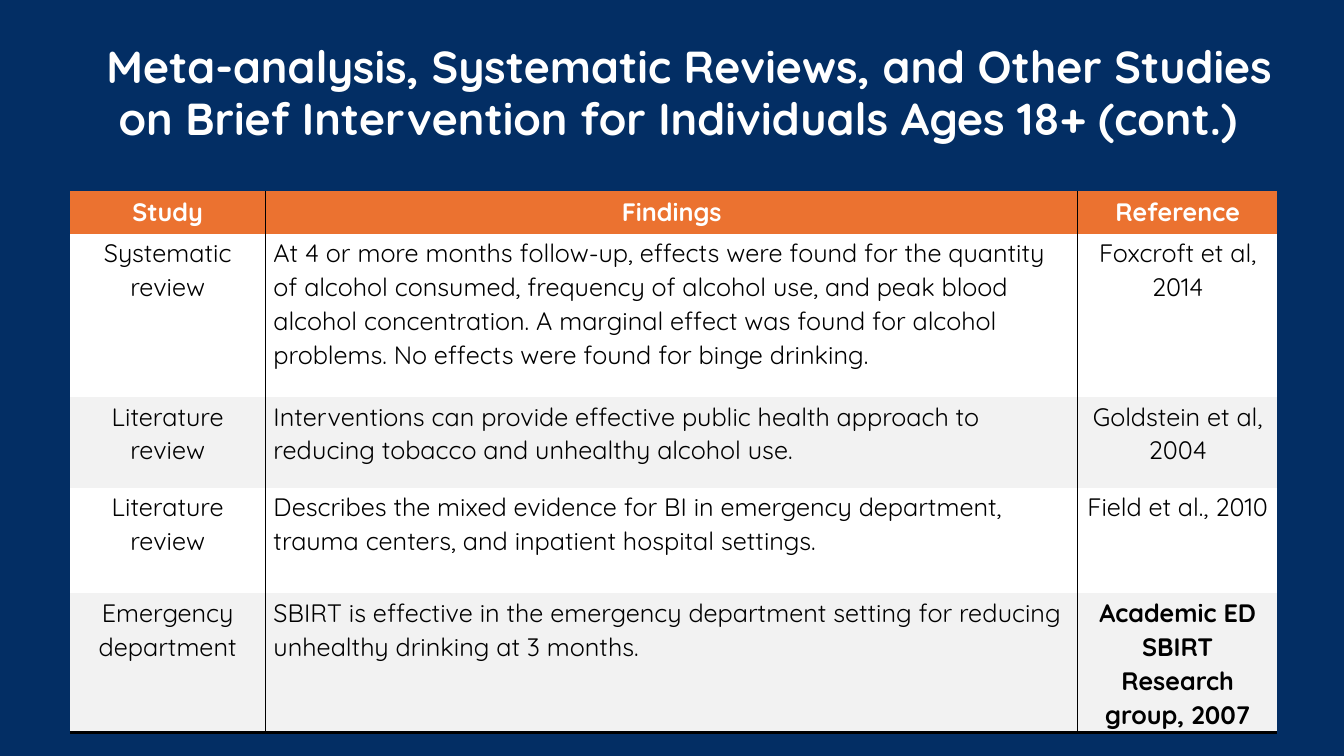
from lxml import etree
from pptx import Presentation, util as u
from pptx.dml.color import RGBColor
from pptx.enum import text
from pptx.oxml.ns import qn

COLORS = {"navy": "032E64", "orange": "EB7230", "white": "FFFFFF",
          "band": "F2F2F2", "black": "000000"}
NO_STYLE = "{2D5ABB26-0587-4C30-8999-92F81FD0307C}"
CENTER, LEFT = text.PP_ALIGN.CENTER, text.PP_ALIGN.LEFT

TITLE = ("Meta-analysis, Systematic Reviews, and Other Studies on "
         "Brief Intervention for Individuals Ages 18+ (cont.)")
HEADINGS = ("Study", "Findings", "Reference")
STUDIES = [
    ("Systematic review",
     "At 4 or more months follow-up, effects were found for the quantity of "
     "alcohol consumed, frequency of alcohol use, and peak blood alcohol "
     "concentration. A marginal effect was found for alcohol problems. "
     "No effects were found for binge drinking.",
     "Foxcroft et al, 2014"),
    ("Literature review",
     "Interventions can provide effective public health approach to reducing "
     "tobacco and unhealthy alcohol use.",
     "Goldstein et al, 2004"),
    ("Literature review",
     "Describes the mixed evidence for BI in emergency department, trauma "
     "centers, and inpatient hospital settings.",
     "Field et al., 2010"),
    ("Emergency department",
     "SBIRT is effective in the emergency department setting for reducing "
     "unhealthy drinking at 3 months.",
     "Academic ED SBIRT Research group, 2007"),
]
# Shares of the slide's width and height
COLUMN_SHARES = (0.1455, 0.6045, 0.1485)
ROW_SHARES = (0.056, 0.216, 0.12, 0.14, 0.147)


def rgb(name):
    return RGBColor.from_string(COLORS[name])


def write(frame, words, size=18, color="black", bold=False, align=CENTER,
          line=1.0, gap=0):
    """Fill a text frame with one formatted paragraph."""
    paragraph = frame.paragraphs[0]
    paragraph.alignment = align
    paragraph.line_spacing = line
    paragraph.space_before = paragraph.space_after = u.Pt(gap)
    run = paragraph.add_run()
    run.text = words
    run.font.name, run.font.size, run.font.bold = "Quicksand", u.Pt(size), bold
    run.font.color.rgb = rgb(color)
    return paragraph


def add_border(cell, side, points):
    """Draw one black edge; call before the cell is filled, in L, R, T, B order."""
    edge = etree.SubElement(cell._tc.get_or_add_tcPr(), qn(f"a:ln{side}"),
                            w=str(u.Pt(points)))
    fill = etree.SubElement(edge, qn("a:solidFill"))
    etree.SubElement(fill, qn("a:srgbClr"), val=COLORS["black"])


class StudySlide:
    def __init__(self, deck):
        self.width, self.height = deck.slide_width, deck.slide_height
        self.slide = deck.slides.add_slide(deck.slide_layouts[5])
        backdrop = self.slide.background.fill
        backdrop.solid()
        backdrop.fore_color.rgb = rgb("navy")

    def x(self, share):
        return round(self.width * share)

    def y(self, share):
        return round(self.height * share)

    def place(self, left, top, width, height):
        return self.x(left), self.y(top), self.x(width), self.y(height)

    def title(self, words, *area):
        heading = self.slide.shapes.title
        heading.left, heading.top, heading.width, heading.height = self.place(*area)
        frame = heading.text_frame
        frame.margin_left = frame.margin_right = 0
        frame.margin_top = frame.margin_bottom = 0
        frame.vertical_anchor = text.MSO_ANCHOR.TOP
        frame.auto_size = text.MSO_AUTO_SIZE.NONE
        frame.word_wrap = True
        paragraph = write(frame, words, size=32, color="white", bold=True, line=0.97)
        # A blank bullet nudges the first line to the right
        properties = paragraph._p.get_or_add_pPr()
        properties.set("marL", str(u.Inches(0.1)))
        properties.set("indent", "0")
        etree.SubElement(properties, qn("a:buChar"), char=" ")

    def table(self, rows, left, top):
        area = self.place(left, top, sum(COLUMN_SHARES), sum(ROW_SHARES))
        grid = self.slide.shapes.add_table(len(rows), len(rows[0]), *area).table
        grid._tbl.tblPr.find(qn("a:tableStyleId")).text = NO_STYLE
        grid.first_row = grid.horz_banding = False
        for column, share in zip(grid.columns, COLUMN_SHARES):
            column.width = self.x(share)
        for row, share in zip(grid.rows, ROW_SHARES):
            row.height = self.y(share)
        for r, entries in enumerate(rows):
            for c, words in enumerate(entries):
                self.cell(grid.cell(r, c), words, r, c, len(rows) - 1)

    def cell(self, cell, words, r, c, last):
        cell.margin_left = cell.margin_right = u.Inches(0.08)
        cell.margin_top = cell.margin_bottom = u.Inches(0.02)
        # Rules between columns and below the last row
        if c > 0:
            add_border(cell, "L", 1)
        if c < 2:
            add_border(cell, "R", 1)
        if r == last:
            add_border(cell, "B", 2)
        cell.fill.solid()
        # Heading row, then banded study rows
        if r == 0:
            cell.fill.fore_color.rgb = rgb("orange")
            cell.vertical_anchor = text.MSO_ANCHOR.MIDDLE
            write(cell.text_frame, words, color="white", bold=True)
        else:
            cell.fill.fore_color.rgb = rgb("white" if r % 2 else "band")
            findings = c == 1
            write(cell.text_frame, words, line=1.07, bold=r == last and c == 2,
                  align=LEFT if findings else CENTER, gap=2 if findings else 0)


def main():
    deck = Presentation()
    deck.slide_width, deck.slide_height = u.Inches(13.33), u.Inches(7.5)
    page = StudySlide(deck)
    page.title(TITLE, 0.031, 0.055, 0.94, 0.165)
    page.table([HEADINGS, *STUDIES], 0.052, 0.253)
    deck.save("out.pptx")


if __name__ == "__main__":
    main()
